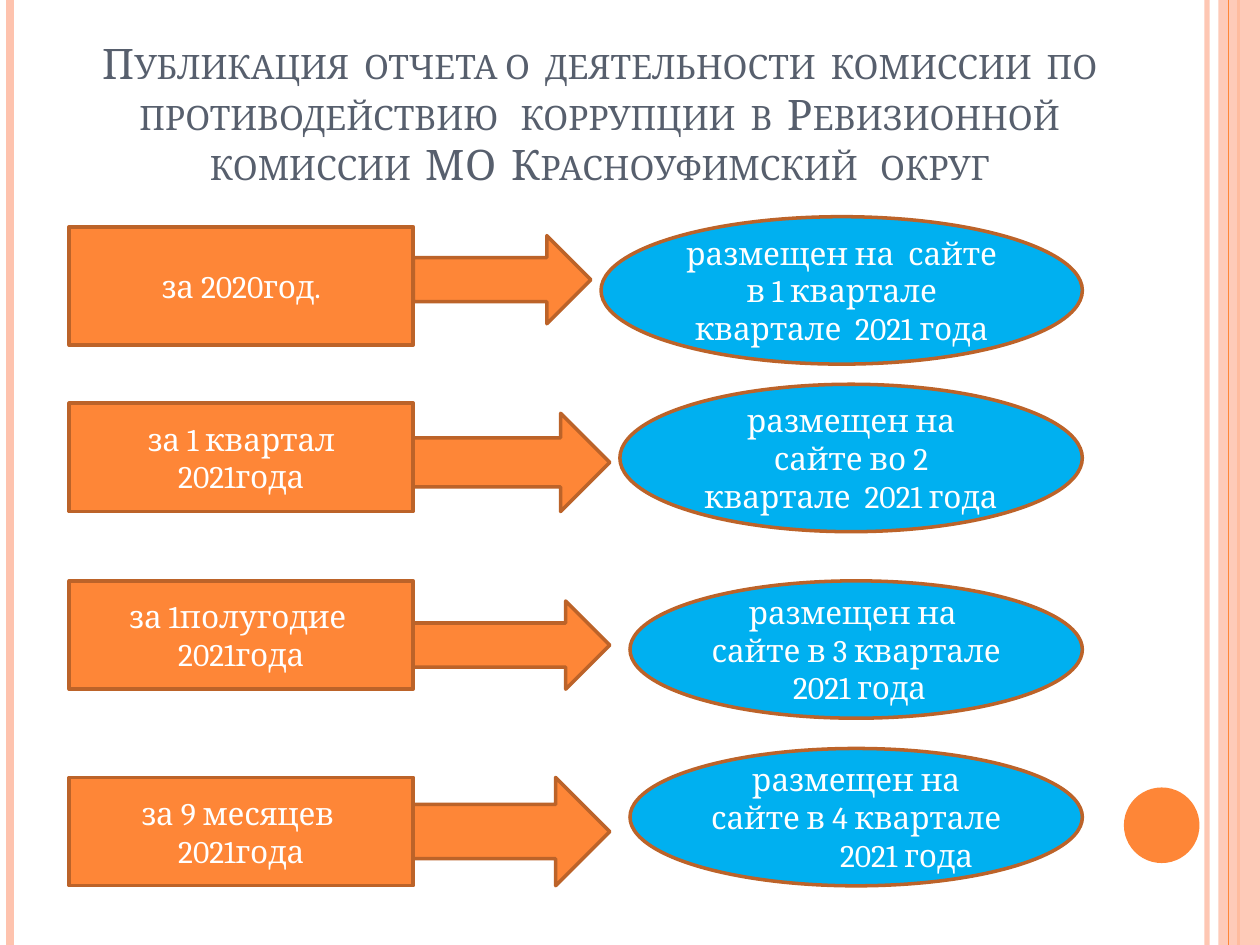
from dataclasses import dataclass

from lxml import etree
from pptx import Presentation
from pptx.dml.color import RGBColor
from pptx.enum import shapes, text
from pptx.oxml import ns
from pptx.util import Inches, Pt


@dataclass(frozen=True)
class Theme:
    """Colours, font and sizes of the deck."""
    orange: str = "FE8637"
    peach: str = "FEC3AE"
    rust: str = "BC6329"
    blue: str = "00B0F0"
    slate: str = "575F6D"
    white: str = "FFFFFF"
    font: str = "Cambria"
    title_size: float = 24
    body_size: float = 18
    outline: float = 2


THEME = Theme()
KIND = shapes.MSO_SHAPE
TITLE = ("Публикация  отчета о  деятельности  комиссии  по противодействию   "
         "коррупции  в  Ревизионной комиссии  МО  Красноуфимский   округ")
LEFT, PERIOD_WIDTH, OVAL_RIGHT = 0.55, 2.73, 8.59
ROWS = [
    {"period": ("за 2020год.", 1.8, 0.94), "arrow": (1.87, 1.41, 0.7),
     "oval": (4.77, 1.72, 1.17),
     "result": ["размещен на  сайте в 1 квартале", "квартале  2021 года"]},
    {"period": ("за 1 квартал 2021года", 3.2, 0.86), "arrow": (3.28, 1.56, 0.78),
     "oval": (4.92, 3.05, 1.17),
     "result": ["размещен на сайте во 2 квартале  2021 года"]},
    {"period": ("за 1полугодие  2021года", 4.61, 0.86), "arrow": (4.77, 1.56, 0.7),
     "oval": (5, 4.61, 1.09),
     "result": ["размещен на \nсайте в 3 квартале  2021 года"]},
    {"period": ("за 9 месяцев  2021года", 6.17, 0.86), "arrow": (6.17, 1.56, 0.86),
     "oval": (5, 5.94, 1.09),
     "result": ["размещен на сайте в 4 квартале", "2021 года"], "last_indent": 0.8},
]


def write(para, words, *, size, color, small_caps=False, indent=0):
    """Put centred, formatted text into a paragraph."""
    para.text = words
    para.alignment = text.PP_ALIGN.CENTER
    if indent:
        para._p.get_or_add_pPr().set("marL", str(Inches(indent)))
    for span in para.runs:
        span.font.name = THEME.font
        span.font.size = Pt(size)
        span.font.color.rgb = RGBColor.from_string(color)
        if small_caps:
            span._r.get_or_add_rPr().set("cap", "small")


def set_alpha(element, percent):
    """Make the colour inside an element partly transparent."""
    color = element.find(".//" + ns.qn("a:srgbClr"))
    etree.SubElement(color, ns.qn("a:alpha"), val=str(percent * 1000))


def add_block(page, kind, box, fill, line=None):
    """Add a flat preset shape in a box given in inches."""
    block = page.shapes.add_shape(kind, *map(Inches, box))
    block.shadow.inherit = False
    block.fill.solid()
    block.fill.fore_color.rgb = RGBColor.from_string(fill)
    if line:
        block.line.color.rgb = RGBColor.from_string(line)
        block.line.width = Pt(THEME.outline)
    else:
        block.line.fill.background()
    return block


def add_stripe(page, x, height, color, width, alpha=None):
    """Add a vertical line from the top of the page."""
    stripe = page.shapes.add_connector(
        shapes.MSO_CONNECTOR.STRAIGHT, Inches(x), 0, Inches(x), Inches(height))
    stripe.line.color.rgb = RGBColor.from_string(color)
    stripe.line.width = Pt(width)
    etree.SubElement(stripe._element.spPr, ns.qn("a:effectLst"))
    if alpha:
        set_alpha(stripe._element.spPr, alpha)


def add_frame(page, width, height):
    """Draw the edge stripes, the side band and the disc."""
    add_stripe(page, width - 0.42, height, THEME.peach, 3, 93)
    add_stripe(page, 0.08, height, THEME.peach, 4.5)
    add_stripe(page, width - 0.17, height, THEME.orange, 1.5)
    band = add_block(page, KIND.RECTANGLE, (width - 0.33, 0, 0.33, height), THEME.peach)
    set_alpha(band._element.spPr, 87)
    add_stripe(page, width - 0.25, height, THEME.orange, 0.75)
    add_block(page, KIND.OVAL, (width - 1.08, height - 1.25, 0.6, 0.6), THEME.orange)


def add_title(page, box):
    """Place the title placeholder."""
    title = page.shapes.title
    title.left, title.top, title.width, title.height = map(Inches, box)
    frame = title.text_frame
    frame.auto_size = text.MSO_AUTO_SIZE.NONE
    frame.vertical_anchor = text.MSO_ANCHOR.BOTTOM
    write(frame.paragraphs[0], TITLE, size=THEME.title_size,
          color=THEME.slate, small_caps=True)


def add_label(page, kind, box, fill, lines, last_indent=0):
    """Add an outlined shape holding one paragraph per line."""
    frame = add_block(page, kind, box, fill, THEME.rust).text_frame
    frame.word_wrap = True
    frame.vertical_anchor = text.MSO_ANCHOR.MIDDLE
    for index, words in enumerate(lines):
        para = frame.add_paragraph() if index else frame.paragraphs[0]
        indent = last_indent if index == len(lines) - 1 else 0
        write(para, words, size=THEME.body_size, color=THEME.white, indent=indent)


def add_row(page, left, right, row):
    """Lay out a period, its arrow and its result between two edges."""
    words, top, height = row["period"]
    add_label(page, KIND.RECTANGLE, (left, top, PERIOD_WIDTH, height),
              THEME.orange, [words])
    top, width, height = row["arrow"]
    add_block(page, KIND.RIGHT_ARROW, (left + PERIOD_WIDTH, top, width, height),
              THEME.orange, THEME.rust)
    start, top, height = row["oval"]
    add_label(page, KIND.OVAL, (start, top, right - start, height),
              THEME.blue, row["result"], row.get("last_indent", 0))


def main():
    """Build and save the deck."""
    deck = Presentation()
    deck.slide_width, deck.slide_height = Inches(10), Inches(7.5)
    page = deck.slides.add_slide(deck.slide_layouts.get_by_name("Title Only"))
    add_frame(page, 10, 7.5)
    add_title(page, (0.5, 0.3, 8.52, 1.25))
    for row in ROWS:
        add_row(page, LEFT, OVAL_RIGHT, row)
    deck.save("out.pptx")


if __name__ == "__main__":
    main()
